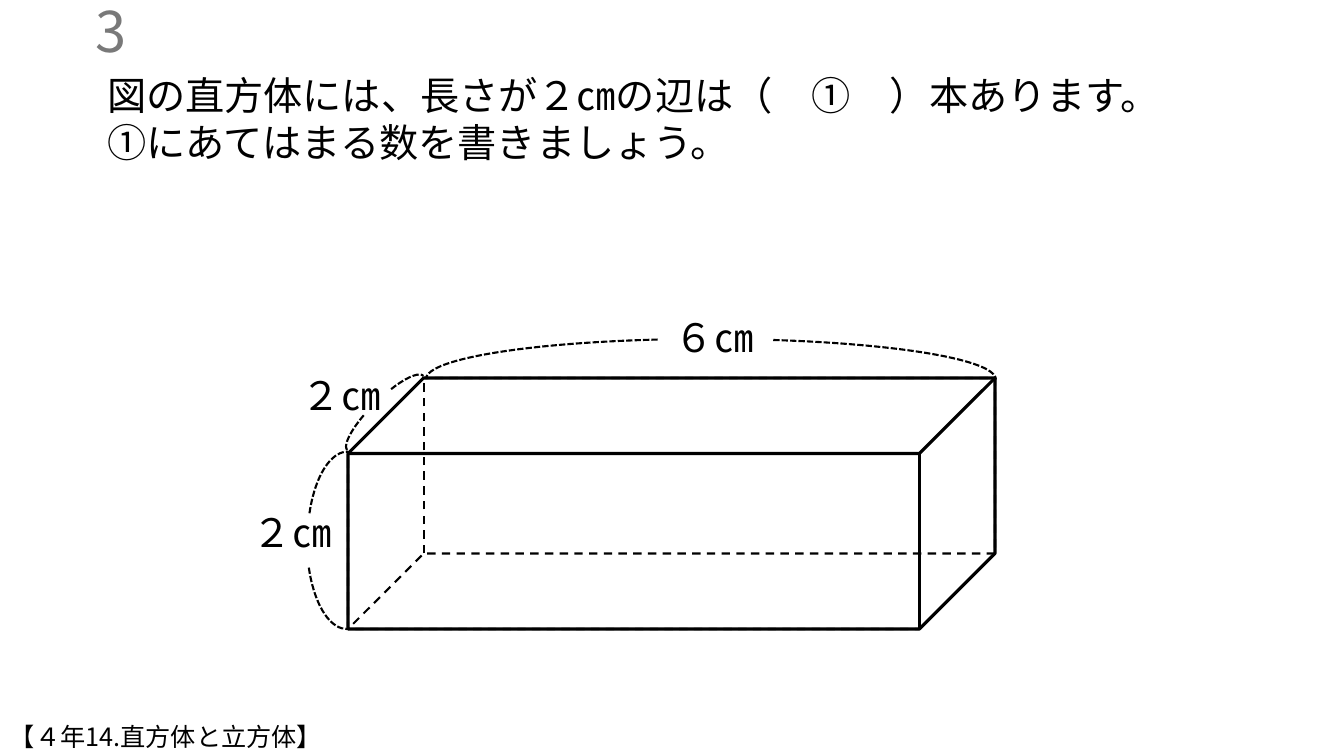
from lxml.etree import SubElement
from pptx import Presentation
from pptx.dml.color import RGBColor
from pptx.enum.dml import MSO_LINE
from pptx.enum.shapes import MSO_SHAPE
from pptx.enum.text import MSO_ANCHOR, MSO_AUTO_SIZE, PP_ALIGN
from pptx.oxml.ns import qn
from pptx.util import Emu, Pt


def rgb(value):
    return RGBColor.from_string(value)


class Worksheet:
    """Draws styled elements on one slide, with lengths in px."""

    FONT = "Noto Sans CJK JP"
    INK = "000000"
    GREY = "797979"
    SCALE = 914400 / 100.8

    def __init__(self, prs):
        prs.slide_width, prs.slide_height = self.emu(1344, 756)
        self.slide = prs.slides.add_slide(prs.slide_layouts[5])
        self.shapes = self.slide.shapes

    def emu(self, *lengths):
        return [Emu(round(n * self.SCALE)) for n in lengths]

    def fill_text(self, sp, lines, size, color=INK, align=PP_ALIGN.LEFT,
                  anchor=MSO_ANCHOR.TOP):
        tf = sp.text_frame
        frame = {"word_wrap": True, "auto_size": MSO_AUTO_SIZE.NONE,
                 "vertical_anchor": anchor}
        for key, value in frame.items():
            setattr(tf, key, value)
        for i, line in enumerate(lines):
            p = tf.add_paragraph() if i else tf.paragraphs[0]
            p.alignment = align
            r = p.add_run()
            r.text = line
            for key, value in {"size": Pt(size), "name": self.FONT}.items():
                setattr(r.font, key, value)
            r.font.color.rgb = rgb(color)
            SubElement(r.font._element, qn("a:ea"), typeface=self.FONT)

    def title(self, box, lines, size):
        sp = self.shapes.title
        for key, value in zip(("left", "top", "width", "height"), self.emu(*box)):
            setattr(sp, key, value)
        self.fill_text(sp, lines, size)

    def text(self, box, line, size, **style):
        sp = self.shapes.add_textbox(*self.emu(*box))
        self.fill_text(sp, [line], size, **style)

    def outline(self, kind, box, adjustments, width, dash=None, rotation=0):
        sp = self.shapes.add_shape(kind, *self.emu(*box))
        sp.shadow.inherit = False
        sp.fill.background()
        sp.line.color.rgb = rgb(self.INK)
        for key, value in {"width": Pt(width), "dash_style": dash}.items():
            setattr(sp.line, key, value)
        sp.rotation = rotation
        for i, value in enumerate(adjustments):
            sp.adjustments[i] = value
        return sp

    def dimension(self, boxes, starts, rotation=0):
        arcs = [self.outline(MSO_SHAPE.ARC, box, (start, 0), 1.5,
                             MSO_LINE.SQUARE_DOT, rotation)
                for box, start in zip(boxes, starts)]
        arcs[1]._element.spPr.xfrm.set("flipH", "1")
        self.shapes.add_group_shape(arcs)

    def cuboid(self, box, depth):
        self.outline(MSO_SHAPE.CUBE, box, [depth], 2.25)
        self.outline(MSO_SHAPE.CUBE, box, [depth], 1.5, MSO_LINE.DASH, 180)


def main():
    prs = Presentation()
    s = Worksheet(prs)
    s.title((97, 66, 1111, 105),
            ["図の直方体には、長さが２㎝の辺は（　①　）本あります。",
             "①にあてはまる数を書きましょう。"], 28)
    s.text((37, 10, 100, 40), "3", 40, color=s.GREY,
           align=PP_ALIGN.RIGHT, anchor=MSO_ANCHOR.MIDDLE)
    s.cuboid((348, 378, 647, 251), 0.301)
    s.dimension([(425, 339, 571, 81), (426, 339, 563, 80)], (196.71, 193))
    s.dimension([(259, 500, 178, 81), (259, 501, 176, 80)], (183.17, 182.95), 270)
    s.dimension([(332, 399, 107, 29), (332, 399, 106, 28)], (196.71, 193), 315.3)
    for left, top, label in [(665, 308, "６㎝"), (243, 503, "２㎝"),
                             (292, 366, "２㎝")]:
        s.text((left, top, 119, 57), label, 28)
    s.text((0, 716, 755, 40), "【４年14.直方体と立方体】", 18)
    prs.save("out.pptx")


if __name__ == "__main__":
    main()
